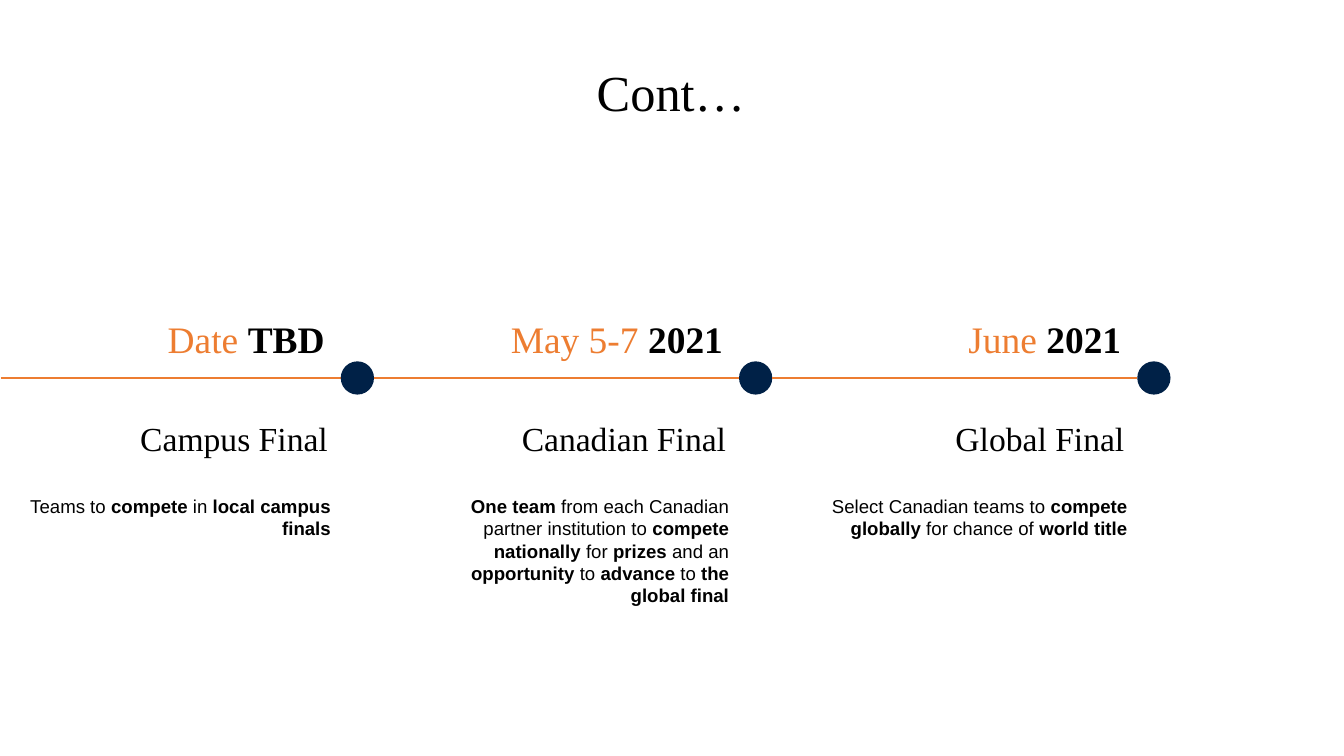
from lxml.etree import SubElement
from pptx import Presentation
from pptx.dml.color import RGBColor
from pptx.enum.shapes import MSO_CONNECTOR, MSO_SHAPE
from pptx.enum.text import MSO_AUTO_SIZE, PP_ALIGN
from pptx.oxml.ns import qn
from pptx.util import Inches, Pt

ORANGE = RGBColor(0xED, 0x7D, 0x31)
NAVY = RGBColor(0x00, 0x21, 0x47)
BLACK = RGBColor(0x00, 0x00, 0x00)
SERIF = "Times New Roman"
SANS = "Arial"

FIRST = 3.38
STEP = 3.95
DOT = 0.33
AXIS = 3.75
REACH = 3.62

STAGES = [
    ("Date *TBD*", "Campus Final",
     "Teams to *compete* in *local campus finals*", 0.55),
    ("May 5-7 *2021*", "Canadian Final",
     "*One team *from each Canadian partner institution to "
     "*compete nationally *for *prizes* and an *opportunity* to "
     "*advance* to *the global final*", 1.22),
    ("June *2021*", "Global Final",
     "Select Canadian teams to *compete globally* for chance of "
     "*world title*", 0.55),
]


def add_text(slide, text, left, top, width, height, size, font=SERIF,
             color=BLACK, align=PP_ALIGN.RIGHT, wrap=True):
    """Add a text box; words between asterisks are bold and black."""
    box = slide.shapes.add_textbox(
        Inches(left), Inches(top), Inches(width), Inches(height))
    frame = box.text_frame
    frame.word_wrap = wrap
    frame.auto_size = MSO_AUTO_SIZE.SHAPE_TO_FIT_TEXT
    para = frame.paragraphs[0]
    para.alignment = align
    for order, part in enumerate(text.split("*")):
        if part:
            bold = order % 2 == 1
            run = para.add_run()
            run.text = part
            run.font.name = font
            run.font.size = Pt(size)
            run.font.bold = bold
            run.font.color.rgb = BLACK if bold else color


def add_line(slide, start, end):
    """Add a stretch of the time axis."""
    line = slide.shapes.add_connector(
        MSO_CONNECTOR.STRAIGHT, Inches(start), Inches(AXIS),
        Inches(end), Inches(AXIS))
    line.line.color.rgb = ORANGE
    line.line.width = Pt(2)
    SubElement(line._element.spPr, qn("a:effectLst"))


def add_dot(slide, left):
    """Add a round marker centred on the time axis."""
    dot = slide.shapes.add_shape(
        MSO_SHAPE.OVAL, Inches(left), Inches(AXIS - DOT / 2),
        Inches(DOT), Inches(DOT))
    dot.shadow.inherit = False
    dot.fill.solid()
    dot.fill.fore_color.rgb = NAVY
    dot.line.fill.background()


def add_stage(slide, left, date, name, detail, height):
    """Add one stage of the timeline, ending at its marker."""
    add_line(slide, max(0.01, left - REACH), left)
    add_dot(slide, left)
    add_text(slide, date, left - 2.66, 3.09, 2.6, 0.55, 26.7, color=ORANGE)
    add_text(slide, name, left - 2.82, 4.1, 2.79, 0.5, 24)
    add_text(slide, detail, left - 3.3, 4.86, 3.3, height, 13.3, font=SANS)


def main():
    """Build the timeline slide and save it."""
    deck = Presentation()
    deck.slide_width = Inches(13.33)
    deck.slide_height = Inches(7.5)
    slide = deck.slides.add_slide(deck.slide_layouts[6])
    add_text(slide, "Cont…", 5.82, 0.56, 1.69, 0.71, 36,
             align=PP_ALIGN.LEFT, wrap=False)
    for order, stage in enumerate(STAGES):
        add_stage(slide, FIRST + order * STEP, *stage)
    deck.save("out.pptx")


if __name__ == "__main__":
    main()
